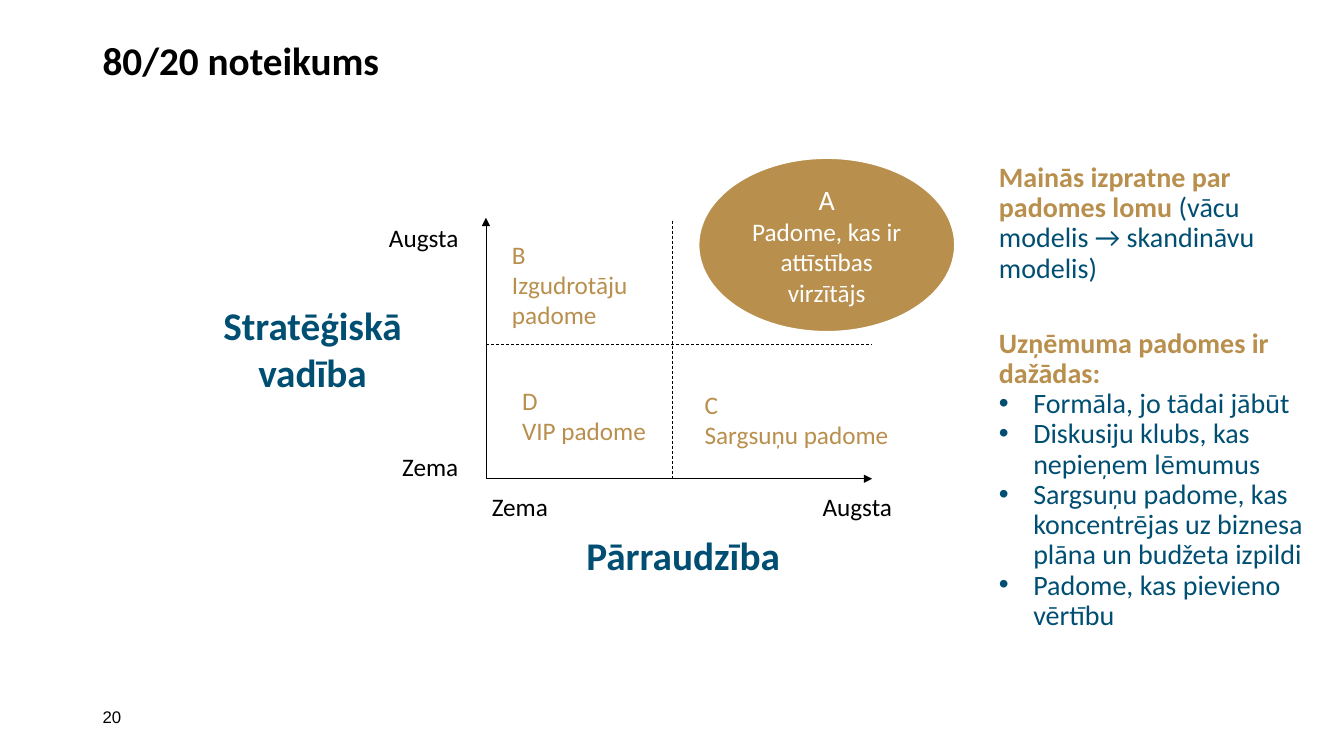
from lxml.etree import SubElement
from pptx import Presentation
from pptx.dml.color import RGBColor
from pptx.enum.dml import MSO_LINE
from pptx.enum.shapes import MSO_CONNECTOR, MSO_SHAPE
from pptx.enum.text import MSO_ANCHOR, MSO_AUTO_SIZE, PP_ALIGN
from pptx.oxml.ns import qn
from pptx.util import Inches, Pt

THEME = {
    "font": "Calibri", "number_font": "Arial",
    "black": "000000", "white": "FFFFFF", "gold": "B98F4D", "blue": "004F73",
    "heading": 28, "body": 20, "label": 18, "number": 12,
    "axis": 0.5, "outline": 1,
}

TITLE = ("80/20 noteikums", (0.92, 0.36, 10.26, 1.03))
NUMBER = ("20", (0.92, 6.91, 3, 0.4))

AXIS_TITLES = [
    ("Stratēģiskā vadība", (1.65, 2.94, 2.9, 1.04)),
    ("Pārraudzība", (4.85, 5.22, 3.85, 0.57)),
]
AXIS_ENDS = [
    ("Augsta", (3.76, 2.16, 0.9, 0.4)),
    ("Zema", (3.89, 4.43, 0.76, 0.4)),
    ("Zema", (4.78, 4.83, 0.76, 0.4)),
    ("Augsta", (8.06, 4.83, 0.9, 0.4)),
]
# letter, name, box, wraps
QUADRANTS = [
    ("B", "Izgudrotāju padome", (4.98, 2.32, 1.54, 1.01), True),
    ("D", "VIP padome", (5.08, 3.77, 1.44, 0.71), False),
    ("C", "Sargsuņu padome", (6.89, 3.81, 2.05, 0.71), False),
]
BEST = ("A", "Padome, kas ir attīstības virzītājs", (6.93, 1.57, 2.54, 1.72))

SIDE_BOX = (9.58, 1.57, 3.56, 4.76)
ROLE = ("Mainās izpratne par padomes lomu ", "(vācu modelis → skandināvu modelis)")
KINDS_HEADING = "Uzņēmuma padomes ir dažādas:"
KINDS = [
    "Formāla, jo tādai jābūt",
    "Diskusiju klubs, kas nepieņem lēmumus",
    "Sargsuņu padome, kas koncentrējas uz biznesa plāna un budžeta izpildi",
    "Padome, kas pievieno vērtību",
]

LEFT, RIGHT, TOP, BOTTOM = 4.82, 8.65, 2.16, 4.75
MID_X, MID_Y = 6.67, 3.42


def rgb(name):
    return RGBColor.from_string(THEME[name])


def run(text, size="label", color="black", bold=False, font="font"):
    """Describe one run as its text and its font values."""
    return text, {"size": Pt(THEME[size]), "bold": bold, "name": THEME[font]}, color


def fill_text(tf, paragraphs, **formats):
    """Write paragraphs, each a list of runs, with shared paragraph formats."""
    for i, runs in enumerate(paragraphs):
        p = tf.paragraphs[0] if i == 0 else tf.add_paragraph()
        for key, value in formats.items():
            setattr(p, key, value)
        for text, values, color in runs:
            r = p.add_run()
            r.text = text
            for key, value in values.items():
                setattr(r.font, key, value)
            r.font.color.rgb = rgb(color)


def add_text(s, box, paragraphs, frame=None, **formats):
    tf = s.shapes.add_textbox(*map(Inches, box)).text_frame
    tf.word_wrap = True
    for key, value in (frame or {}).items():
        setattr(tf, key, value)
    fill_text(tf, paragraphs, **formats)
    return tf


def add_axis_line(s, x1, y1, x2, y2, arrow):
    """Draw an axis with an arrowhead, or a dashed divider without one."""
    c = s.shapes.add_connector(MSO_CONNECTOR.STRAIGHT, *map(Inches, (x1, y1, x2, y2)))
    c.line.color.rgb = rgb("black")
    c.line.width = Pt(THEME["axis"])
    if arrow:
        SubElement(c.line._get_or_add_ln(), qn("a:tailEnd"), type="triangle")
    else:
        c.line.dash_style = MSO_LINE.DASH
    SubElement(c._element.spPr, qn("a:effectLst"))


def indent(p, left, first=0, bullet=False):
    pPr = p._p.get_or_add_pPr()
    pPr.set("marL", str(Inches(left)))
    pPr.set("indent", str(Inches(first)))
    if bullet:
        SubElement(pPr, qn("a:buFont"), typeface="Arial")
        SubElement(pPr, qn("a:buChar"), char="•")


def add_matrix(s):
    grow = {"auto_size": MSO_AUTO_SIZE.SHAPE_TO_FIT_TEXT}
    for text, box in AXIS_TITLES:
        add_text(s, box, [[run(text, "heading", "blue", True)]], grow,
                 alignment=PP_ALIGN.CENTER)
    for text, box in AXIS_ENDS:
        add_text(s, box, [[run(text)]], {**grow, "word_wrap": False})

    add_axis_line(s, LEFT, BOTTOM, RIGHT, BOTTOM, True)
    add_axis_line(s, LEFT, BOTTOM, LEFT, TOP, True)
    add_axis_line(s, LEFT, MID_Y, RIGHT, MID_Y, False)
    add_axis_line(s, MID_X, TOP + 0.03, MID_X, BOTTOM, False)

    letter, name, box = BEST
    sp = s.shapes.add_shape(MSO_SHAPE.OVAL, *map(Inches, box))
    sp.shadow.inherit = False
    sp.fill.solid()
    sp.fill.fore_color.rgb = rgb("gold")
    sp.line.color.rgb = rgb("white")
    sp.line.width = Pt(THEME["outline"])
    sp.text_frame.vertical_anchor = MSO_ANCHOR.MIDDLE
    fill_text(sp.text_frame, [[run(letter, "body", "white")], [run(name, color="white")]],
              alignment=PP_ALIGN.CENTER)

    for letter, name, box, wraps in QUADRANTS:
        add_text(s, box, [[run(letter, color="gold")], [run(name, color="gold")]],
                 {**grow, "word_wrap": wraps})


def add_side_notes(s):
    lead, rest = ROLE
    paragraphs = [
        [run(lead, "body", "gold", True), run(rest, "body", "blue")],
        [run(KINDS_HEADING, "body", "gold", True)],
    ] + [[run(kind, "body", "blue")] for kind in KINDS]
    tf = add_text(s, SIDE_BOX, paragraphs, line_spacing=0.9)
    role, heading, *kinds = tf.paragraphs
    heading.space_before = Pt(32)
    for p in (role, heading):
        indent(p, 0.23)
    for p in kinds:
        indent(p, 0.57, -0.34, bullet=True)


def main():
    prs = Presentation()
    prs.slide_width, prs.slide_height = Inches(13.33), Inches(7.5)
    s = prs.slides.add_slide(prs.slide_layouts[6])
    text, box = TITLE
    add_text(s, box, [[run(text, "heading", bold=True)]], line_spacing=0.9)
    add_matrix(s)
    add_side_notes(s)
    text, box = NUMBER
    add_text(s, box, [[run(text, "number", font="number_font")]],
             {"vertical_anchor": MSO_ANCHOR.MIDDLE})
    prs.save("out.pptx")


if __name__ == "__main__":
    main()
